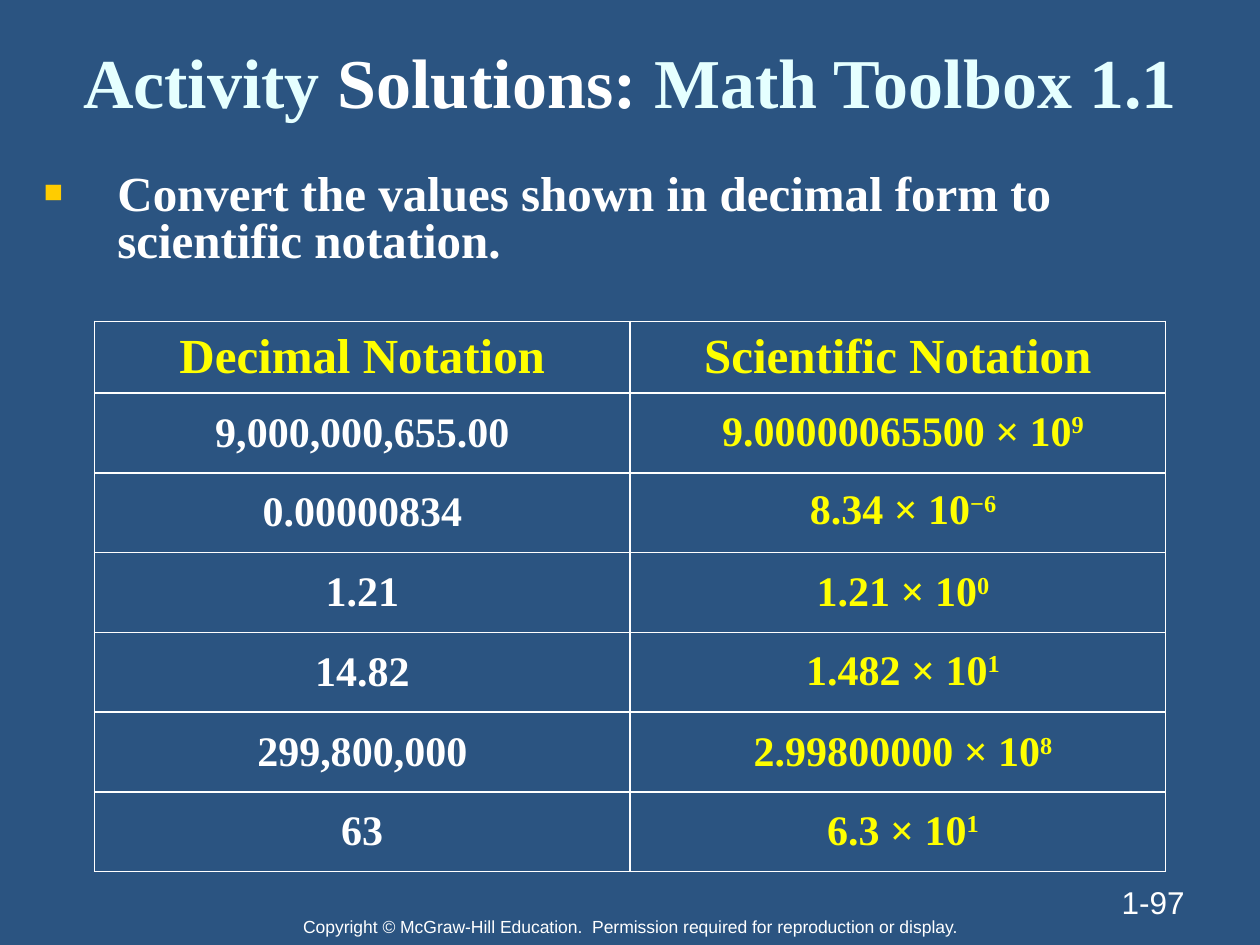
from lxml import etree
from pptx import Presentation
from pptx.dml.color import RGBColor
from pptx.enum.text import MSO_ANCHOR, MSO_AUTO_SIZE, PP_ALIGN
from pptx.oxml.ns import qn
from pptx.util import Pt

TOP, MIDDLE, BOTTOM = MSO_ANCHOR.TOP, MSO_ANCHOR.MIDDLE, MSO_ANCHOR.BOTTOM
LEFT, CENTER, RIGHT = PP_ALIGN.LEFT, PP_ALIGN.CENTER, PP_ALIGN.RIGHT
GROW = MSO_AUTO_SIZE.SHAPE_TO_FIT_TEXT

NAVY = RGBColor(0x2B, 0x54, 0x81)
WHITE = RGBColor(0xFF, 0xFF, 0xFF)
ICE = RGBColor(0xE5, 0xFF, 0xFF)
YELLOW = RGBColor(0xFF, 0xFF, 0x00)
GOLD = RGBColor(0xFF, 0xCC, 0x00)
SERIF, SANS = "Times New Roman", "Arial"

HEADS = ["Decimal Notation", "Scientific Notation"]
VALUES = ["9,000,000,655.00", "0.00000834", "1.21", "14.82", "299,800,000", "63"]
POWERS = [
    ("9.00000065500", "9", 16),
    ("8.34", "−6", 18),
    ("1.21", "0", 16),
    ("1.482", "1", 18),
    ("2.99800000", "8", 16),
    ("6.3", "1", 8),
]


class Deck:
    def __init__(self):
        self.prs = Presentation()
        self.prs.slide_width, self.prs.slide_height = Pt(720), Pt(540)
        self.slide = self.prs.slides.add_slide(self.prs.slide_layouts[6])
        fill = self.slide.background.fill
        fill.solid()
        fill.fore_color.rgb = NAVY

    def box(self, x, y, w, h, anchor=TOP, grow=False):
        frame = self.slide.shapes.add_textbox(Pt(x), Pt(y), Pt(w), Pt(h)).text_frame
        frame.word_wrap = True
        frame.vertical_anchor = anchor
        if grow:
            frame.auto_size = GROW
        return frame

    def run(self, para, text, size, color, font=SERIF, raised=False):
        run = para.add_run()
        run.text = text
        run.font.size = Pt(size)
        run.font.name = font
        run.font.bold = font == SERIF
        run.font.color.rgb = color
        if raised:
            run.font._element.set("baseline", "30000")

    def line(self, frame, runs, size, align=CENTER, font=SERIF):
        para = frame.paragraphs[0]
        para.alignment = align
        for text, color in runs:
            self.run(para, text, size, color, font)
        return para

    def bullet(self, para, indent):
        props = para._p.get_or_add_pPr()
        props.set("marL", str(Pt(indent)))
        props.set("indent", str(Pt(-indent)))
        tint = etree.SubElement(props, qn("a:buClr"))
        etree.SubElement(tint, qn("a:srgbClr"), val=str(GOLD))
        etree.SubElement(props, qn("a:buSzPct"), val="65000")
        etree.SubElement(props, qn("a:buFont"), typeface=SANS)
        etree.SubElement(props, qn("a:buChar"), char="■")

    def border(self, cell):
        props = cell._tc.get_or_add_tcPr()
        for side in ("lnL", "lnR", "lnT", "lnB"):
            edge = etree.SubElement(props, qn("a:" + side), w=str(Pt(1)))
            fill = etree.SubElement(edge, qn("a:solidFill"))
            etree.SubElement(fill, qn("a:srgbClr"), val=str(WHITE))

    def table(self, x, y, w, heights, rows):
        cols = len(rows[0])
        shape = self.slide.shapes.add_table(
            len(rows), cols, Pt(x), Pt(y), Pt(w), Pt(sum(heights)))
        table = shape.table
        table.first_row = table.horz_banding = False
        for r, texts in enumerate(rows):
            table.rows[r].height = Pt(heights[r])
            size, color = (24, WHITE) if r else (28, YELLOW)
            for c, text in enumerate(texts):
                cell = table.cell(r, c)
                self.border(cell)
                cell.fill.background()
                cell.vertical_anchor = MIDDLE
                if text:
                    self.line(cell.text_frame, [(text, color)], size)

    def powers(self, frame, items):
        for i, (base, power, gap) in enumerate(items):
            para = frame.add_paragraph() if i else frame.paragraphs[0]
            para.alignment = CENTER
            para.space_after = Pt(gap)
            self.run(para, base + " × 10", 24, YELLOW)
            self.run(para, power, 24, YELLOW, raised=True)


def main():
    deck = Deck()
    deck.line(deck.box(0, 520, 720, 20, grow=True), [(
        "Copyright © McGraw-Hill Education.  Permission required for reproduction or display.",
        WHITE)], 10, font=SANS)
    deck.line(deck.box(516, 492, 168, 37.5, BOTTOM), [("1-97", WHITE)], 18, RIGHT, SANS)
    deck.line(deck.box(0, 18, 720, 56, MIDDLE), [
        ("Activity", ICE), (" Solutions:", WHITE), (" Math Toolbox 1.1", ICE)], 40)

    rows = [HEADS] + [[value, ""] for value in VALUES]
    deck.table(54, 183.6, 612, [41] + [45.6] * len(VALUES), rows)

    task = deck.line(deck.box(18, 96, 660, 72), [(
        "Convert the values shown in decimal form to scientific notation.", WHITE)], 28, LEFT)
    deck.bullet(task, 42)
    task.line_spacing = 0.8

    deck.powers(deck.box(402, 227.5, 228, 264, grow=True), POWERS)
    deck.prs.save("out.pptx")


if __name__ == "__main__":
    main()
